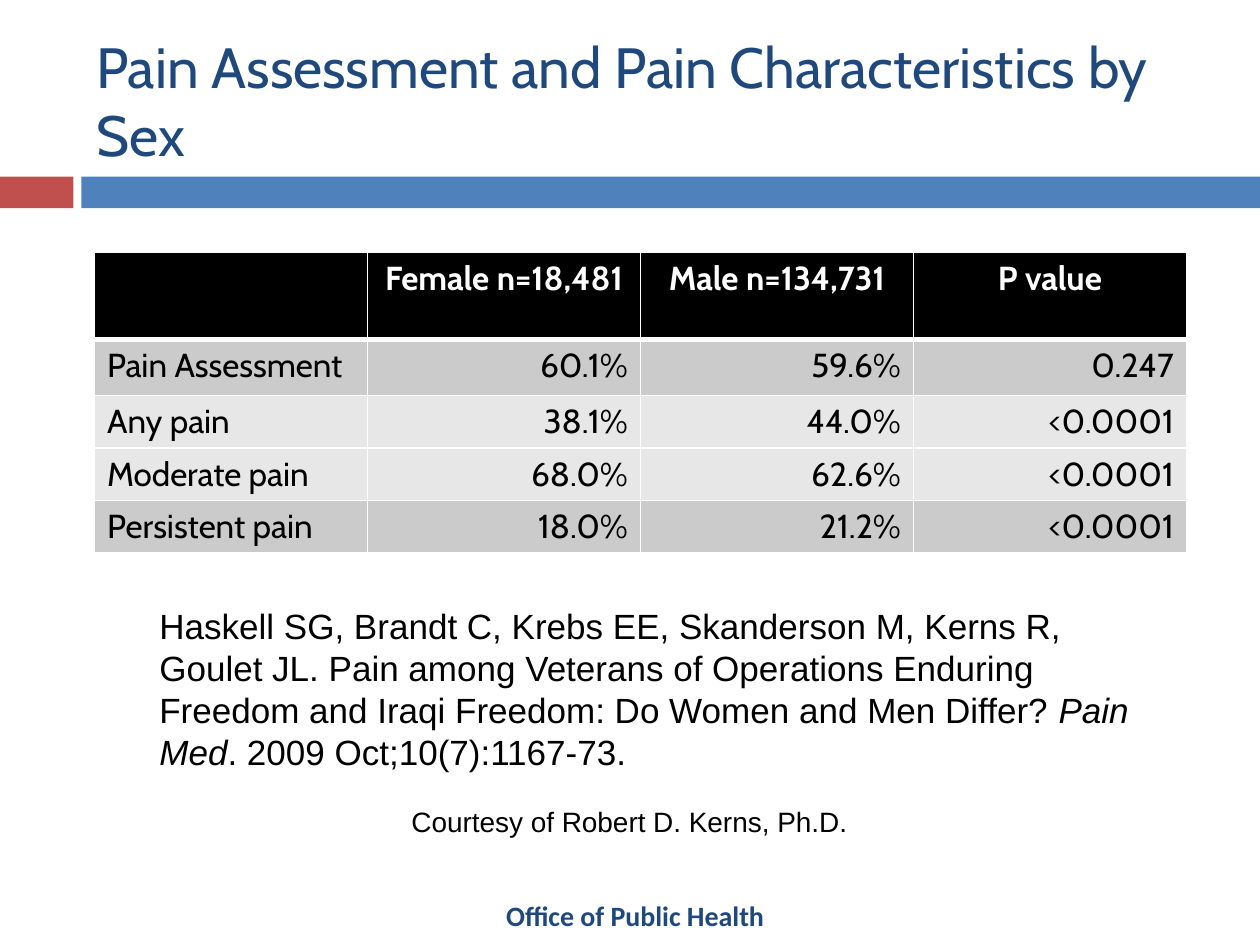
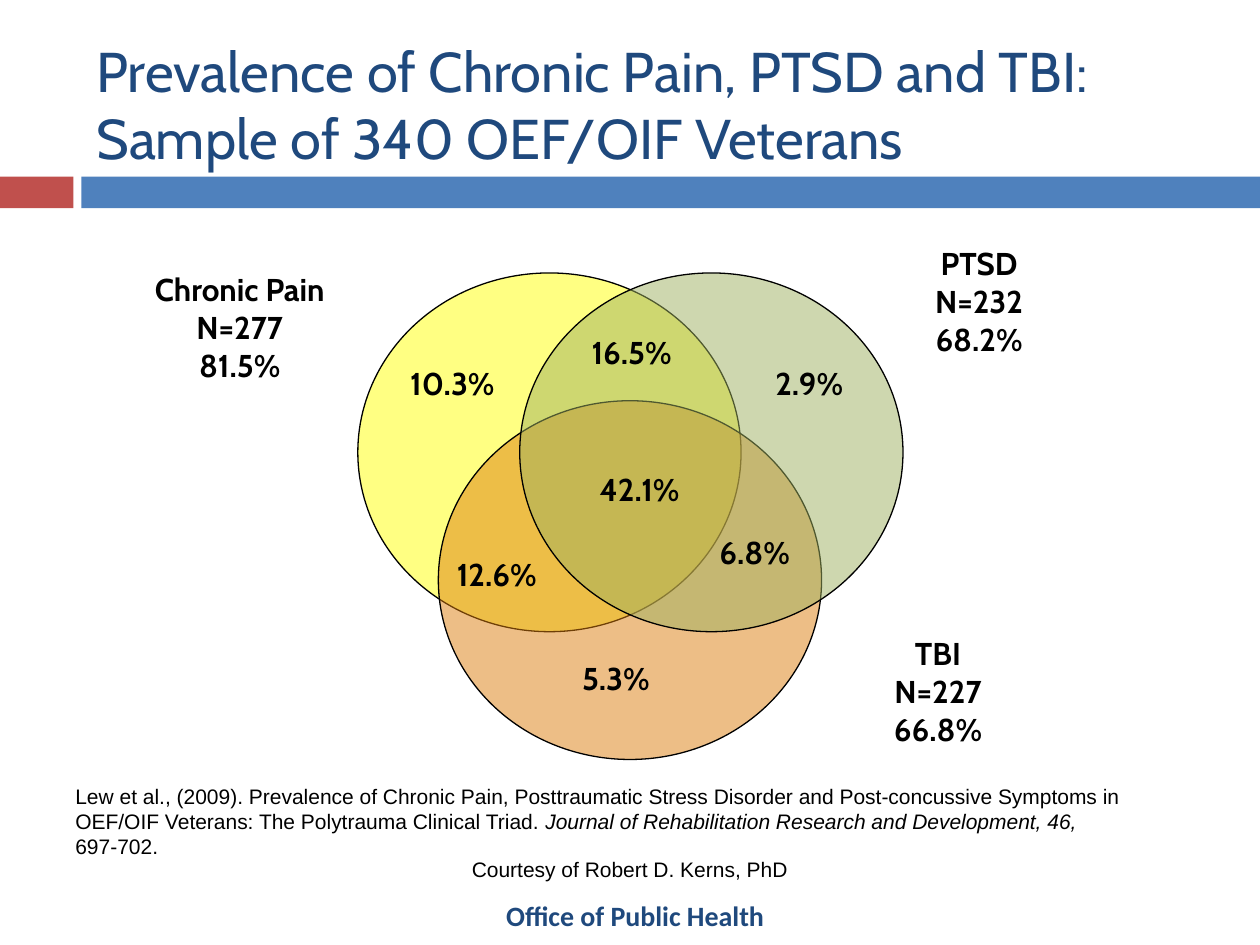
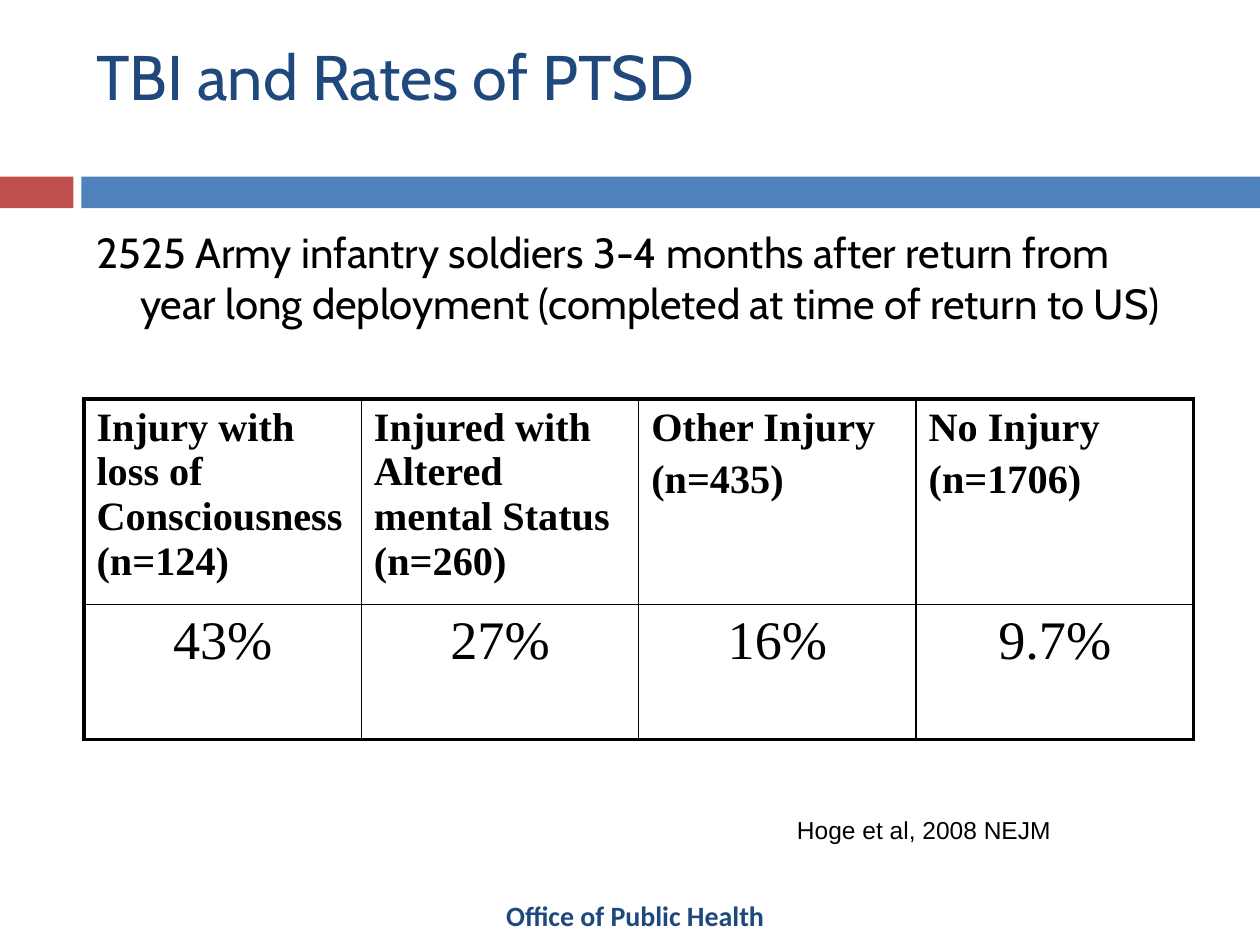
from lxml.etree import SubElement
from pptx import Presentation
from pptx.dml.color import RGBColor
from pptx.enum.shapes import MSO_SHAPE
from pptx.enum.text import MSO_ANCHOR, PP_ALIGN
from pptx.oxml.ns import qn
from pptx.util import Pt

NAVY, BLUE, RED = "1F497D", "4F81BD", "C0504D"
BLACK, WHITE = "000000", "FFFFFF"
DARK_GREY, LIGHT_GREY = "CBCBCB", "E7E7E7"
LEFT, CENTER, RIGHT = PP_ALIGN.LEFT, PP_ALIGN.CENTER, PP_ALIGN.RIGHT


def rgb(value):
    return RGBColor.from_string(value)


def write(tf, paragraphs, size=18, font="Arial", color=BLACK, bold=False,
          align=LEFT, anchor=MSO_ANCHOR.TOP, spacing=None, before=0, hanging=0):
    tf.word_wrap = True
    tf.vertical_anchor = anchor
    if isinstance(paragraphs, str):
        paragraphs = [paragraphs]
    for i, runs in enumerate(paragraphs):
        p = tf.add_paragraph() if i else tf.paragraphs[0]
        p.alignment = align
        if spacing:
            p.line_spacing = Pt(spacing)
        if i and before:
            p.space_before = Pt(before)
        if hanging:
            pPr = p._p.get_or_add_pPr()
            pPr.set("marL", str(Pt(hanging)))
            pPr.set("indent", str(-Pt(hanging)))
        for text, italic in [(runs, False)] if isinstance(runs, str) else runs:
            for j, line in enumerate(text.split("\n")):
                if j:
                    p.add_line_break()
                r = p.add_run()
                r.text = line
                f = r.font
                f.size, f.name, f.bold, f.italic = Pt(size), font, bold, italic
                f.color.rgb = rgb(color)


def add_text(s, box, paragraphs, **fmt):
    tb = s.shapes.add_textbox(*map(Pt, box))
    write(tb.text_frame, paragraphs, **fmt)


def add_shape(s, kind, box, fill, line=None, alpha=None):
    sp = s.shapes.add_shape(kind, *map(Pt, box))
    sp.shadow.inherit = False
    sp.fill.solid()
    sp.fill.fore_color.rgb = rgb(fill)
    if alpha:
        clr = sp.fill._xPr.find(qn("a:solidFill"))[0]
        SubElement(clr, qn("a:alpha"), val=str(alpha * 1000))
    if line:
        sp.line.color.rgb = rgb(line)
        sp.line.width = Pt(0.75)
    else:
        sp.line.fill.background()


def add_grid(s, left, top, col_width, heights, cols):
    frame = s.shapes.add_table(len(heights), cols, Pt(left), Pt(top),
                               Pt(col_width * cols), Pt(sum(heights)))
    table = frame.table
    table.first_row = table.horz_banding = False
    for col in table.columns:
        col.width = Pt(col_width)
    for row, height in zip(table.rows, heights):
        row.height = Pt(height)
    return table


def set_borders(cell, color, left=1, right=1, top=1, bottom=1):
    tcPr = cell._tc.get_or_add_tcPr()
    for side, width in zip("LRTB", (left, right, top, bottom)):
        ln = SubElement(tcPr, qn(f"a:ln{side}"), w=str(Pt(width)))
        SubElement(SubElement(ln, qn("a:solidFill")), qn("a:srgbClr"), val=color)


def add_page(prs, title, size, width=642, **fmt):
    s = prs.slides.add_slide(prs.slide_layouts[6])
    add_shape(s, MSO_SHAPE.RECTANGLE, (0, 101, 42, 18), RED)
    add_shape(s, MSO_SHAPE.RECTANGLE, (46.5, 101, 673.5, 18), BLUE)
    add_text(s, (258, 510, 210, 26.5), "Office of Public Health",
             size=16, font="Calibri", color=NAVY, bold=True, align=CENTER)
    add_text(s, (48, 18, width, 78), title, size=size, font="Cabin", color=NAVY, **fmt)
    return s


def add_pain_table(s):
    rows = [
        ("", "Female n=18,481", "Male n=134,731", "P value"),
        ("Pain Assessment", "60.1%", "59.6%", "0.247"),
        ("Any pain", "38.1%", "44.0%", "<0.0001"),
        ("Moderate pain", "68.0%", "62.6%", "<0.0001"),
        ("Persistent pain", "18.0%", "21.2%", "<0.0001"),
    ]
    fills = [BLACK, DARK_GREY, LIGHT_GREY, LIGHT_GREY, DARK_GREY]
    table = add_grid(s, 54, 144, 156, [50, 32, 30, 30, 30], 4)
    for i, (row, fill) in enumerate(zip(rows, fills)):
        header = i == 0
        for j, text in enumerate(row):
            cell = table.cell(i, j)
            set_borders(cell, WHITE, top=3 if i == 1 else 1, bottom=3 if header else 1)
            cell.fill.solid()
            cell.fill.fore_color.rgb = rgb(fill)
            if text:
                write(cell.text_frame, text, size=19, font="Cabin", bold=header,
                      color=WHITE if header else BLACK,
                      align=CENTER if header else RIGHT if j else LEFT)


def add_injury_table(s):
    groups = [
        (["Injury with loss of Consciousness (n=124)"], "43%"),
        (["Injured with Altered mental Status (n=260)"], "27%"),
        (["Other Injury", "(n=435)"], "16%"),
        (["No Injury", "(n=1706)"], "9.7%"),
    ]
    table = add_grid(s, 48, 228, 158.5, [110, 77], len(groups))
    outer = 2.25
    for j, (group, rate) in enumerate(groups):
        sides = {"left": 1 if j else outer,
                 "right": outer if j == len(groups) - 1 else 1}
        head, body = table.cell(0, j), table.cell(1, j)
        set_borders(head, BLACK, top=outer, **sides)
        set_borders(body, BLACK, bottom=outer, **sides)
        for cell in (head, body):
            cell.fill.background()
        write(head.text_frame, group, size=23, font="Times New Roman",
              bold=True, before=4.6)
        write(body.text_frame, rate, size=31, font="Times New Roman", align=CENTER)


def add_venn(s):
    circles = [
        (204.5, 156, "FFFF00", 49),
        (250.5, 229, "DD7E0E", 50),
        (297, 156, "9EB160", 50),
    ]
    for x, y, fill, alpha in circles:
        add_shape(s, MSO_SHAPE.OVAL, (x, y, 219, 205), fill, line=BLACK, alpha=alpha)
    labels = [
        (507.5, 136, 104, 84, ["PTSD N=232", "68.2%"], CENTER),
        (484, 359, 104, 84, ["TBI", "N=227", "66.8%"], CENTER),
        (67.5, 151, 139, 84, ["Chronic Pain", "N=277", "81.5%"], CENTER),
        (436, 204.5, 69, 36, "2.9%", LEFT),
        (331, 186.5, 77, 36, "16.5%", LEFT),
        (331, 265, 69, 36, "42.1%", CENTER),
        (404, 301, 69, 36, "6.8%", LEFT),
        (325.5, 373, 74, 36, "5.3%", LEFT),
        (219, 204.5, 79, 36, "10.3%", CENTER),
        (254, 313.5, 81, 36, "12.6%", LEFT),
    ]
    for x, y, w, h, text, align in labels:
        add_text(s, (x, y, w, h), text, font="Cabin", bold=True, align=align)


def add_assessment_slide(prs):
    s = add_page(prs, "Pain Assessment and Pain Characteristics by Sex", 32.4,
                 anchor=MSO_ANCHOR.MIDDLE)
    add_pain_table(s)
    add_text(s, (84, 342, 582, 104.5), [[
        ("Haskell SG, Brandt C, Krebs EE, Skanderson M, Kerns R, Goulet JL. "
         "Pain among Veterans of Operations Enduring Freedom and Iraqi Freedom: "
         "Do Women and Men Differ? ", False),
        ("Pain Med", True),
        (". 2009 Oct;10(7):1167-73.", False)]], size=20)
    add_text(s, (228, 456, 276, 26.5), "Courtesy of Robert D. Kerns, Ph.D.", size=16)


def add_prevalence_slide(prs):
    s = add_page(prs, "Prevalence of Chronic Pain, PTSD and TBI:\n"
                 "Sample of 340 OEF/OIF Veterans", 32, width=672, spacing=38)
    add_venn(s)
    add_text(s, (36, 444, 612, 51), [[
        ("Lew et al., (2009). Prevalence of Chronic Pain, Posttraumatic Stress Disorder "
         "and Post-concussive Symptoms in OEF/OIF Veterans: "
         "The Polytrauma Clinical Triad. ", False),
        ("Journal of Rehabilitation Research and Development, 46, ", True),
        ("697-702.", False)]], size=12)
    add_text(s, (252, 486, 216, 22), "Courtesy of Robert D. Kerns, PhD",
             size=12, align=CENTER)


def add_rates_slide(prs):
    s = add_page(prs, "TBI and Rates of PTSD", 36)
    add_text(s, (48, 126, 642, 354),
             "2525 Army infantry soldiers 3-4 months after return from "
             "year long deployment (completed at time of return to US)",
             size=24, font="Cabin", hanging=25)
    add_injury_table(s)
    add_text(s, (426, 462, 204, 24), "Hoge et al, 2008 NEJM", size=14, align=CENTER)


def main():
    prs = Presentation()
    prs.slide_width, prs.slide_height = Pt(720), Pt(540)
    add_assessment_slide(prs)
    add_prevalence_slide(prs)
    add_rates_slide(prs)
    prs.save("out.pptx")


if __name__ == "__main__":
    main()
